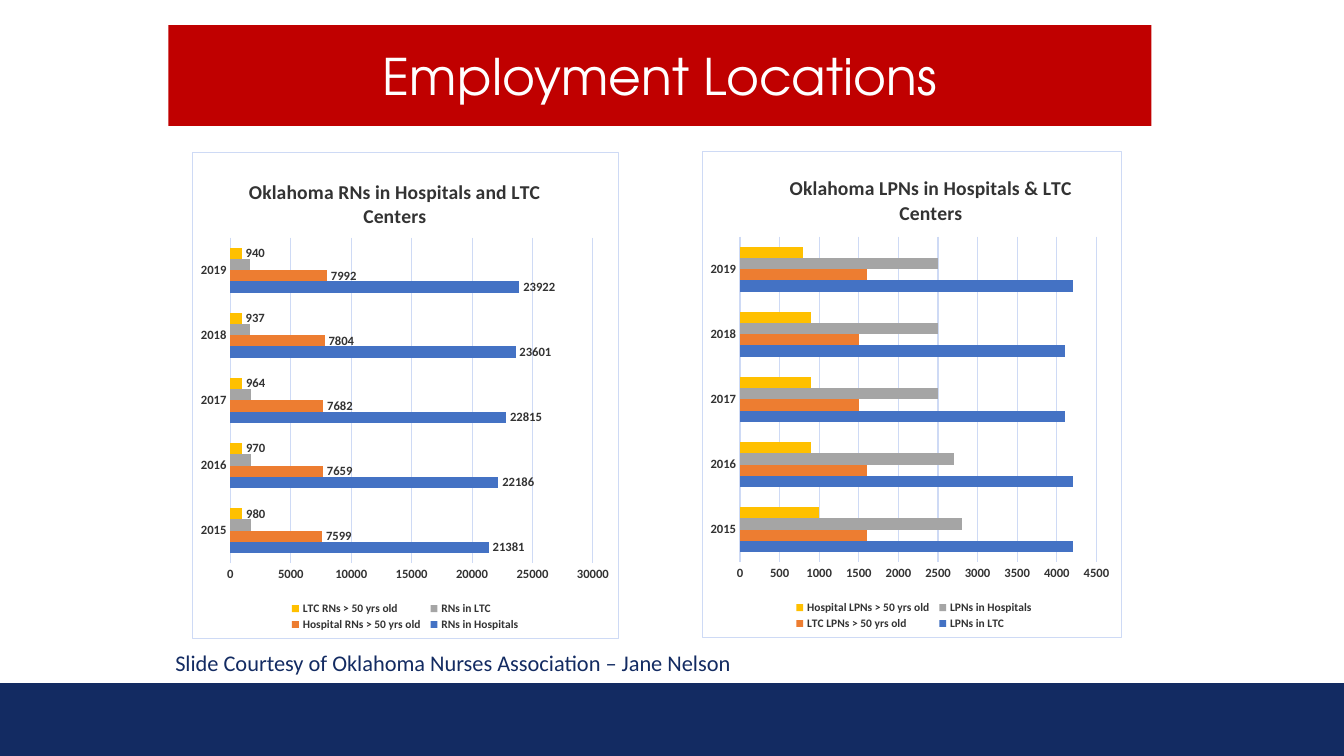
from lxml import etree
from pptx import Presentation
from pptx.chart.data import CategoryChartData
from pptx.dml.color import RGBColor
from pptx.enum.chart import (XL_CHART_TYPE, XL_LABEL_POSITION,
                             XL_LEGEND_POSITION, XL_TICK_MARK)
from pptx.enum.shapes import MSO_SHAPE
from pptx.enum.text import MSO_ANCHOR, PP_ALIGN
from pptx.oxml import parse_xml
from pptx.oxml.ns import nsdecls, qn
from pptx.util import Inches, Pt

BAR_CLUSTERED = XL_CHART_TYPE.BAR_CLUSTERED
OUTSIDE_END = XL_LABEL_POSITION.OUTSIDE_END
LEGEND_BOTTOM = XL_LEGEND_POSITION.BOTTOM
NO_TICK = XL_TICK_MARK.NONE
RECTANGLE = MSO_SHAPE.RECTANGLE
MIDDLE = MSO_ANCHOR.MIDDLE
LEFT, CENTER = PP_ALIGN.LEFT, PP_ALIGN.CENTER

NAVY = RGBColor(0x13, 0x2B, 0x62)
RED = RGBColor(0xC0, 0x00, 0x00)
WHITE = RGBColor(0xFF, 0xFF, 0xFF)
BLACK = RGBColor(0x00, 0x00, 0x00)
CHARCOAL = RGBColor(0x33, 0x33, 0x33)
PALE_BLUE = RGBColor(0xCE, 0xDA, 0xF5)
SERIES_COLORS = (RGBColor(0x44, 0x72, 0xC4), RGBColor(0xED, 0x7D, 0x31),
                 RGBColor(0xA5, 0xA5, 0xA5), RGBColor(0xFF, 0xC0, 0x00))

SLIDE_W, SLIDE_H = 13.33, 7.5
TITLE_FONT, BODY_FONT = "TeX Gyre Adventor", "Calibri"
YEARS = ("2015", "2016", "2017", "2018", "2019")

# Series, bottom bar first: name, values, whether the bars carry labels
RN_STAFF = (
    ("RNs in Hospitals", (21381, 22186, 22815, 23601, 23922), True),
    ("Hospital RNs > 50 yrs old", (7599, 7659, 7682, 7804, 7992), True),
    ("RNs in LTC", (1700, 1700, 1700, 1600, 1600), False),
    ("LTC RNs > 50 yrs old", (980, 970, 964, 937, 940), True),
)
LPN_STAFF = (
    ("LPNs in LTC", (4200, 4200, 4100, 4100, 4200), False),
    ("LTC LPNs > 50 yrs old", (1600, 1600, 1500, 1500, 1600), False),
    ("LPNs in Hospitals", (2800, 2700, 2500, 2500, 2500), False),
    ("Hospital LPNs > 50 yrs old", (1000, 900, 900, 900, 800), False),
)


def format_font(font, size, color=CHARCOAL, name=BODY_FONT, bold=False):
    font.size, font.name, font.bold = Pt(size), name, bold
    font.color.rgb = color


def write_text(frame, text, align=LEFT, **font_format):
    frame.text = text
    paragraph = frame.paragraphs[0]
    paragraph.alignment = align
    format_font(paragraph.runs[0].font, **font_format)


def place(shape, box):
    shape.left, shape.top, shape.width, shape.height = map(Inches, box)


def set_layout(part, shares, inner=False):
    """Place a chart part by shares of the chart's size: x, y[, w, h]."""
    for old in part.findall(qn("c:layout")):
        part.remove(old)
    layout = etree.Element(qn("c:layout"))
    manual = etree.SubElement(layout, qn("c:manualLayout"))
    settings = [("layoutTarget", "inner")] if inner else []
    settings += [("xMode", "edge"), ("yMode", "edge")]
    settings += zip("xywh", shares)
    for tag, value in settings:
        etree.SubElement(manual, qn("c:" + tag)).set("val", str(value))
    overlay = part.find(qn("c:overlay"))
    if overlay is None:
        part.insert(0, layout)
    else:
        overlay.addprevious(layout)


def frame_chart(chart):
    """White background with a thin pale border."""
    chart.element.find(qn("c:chart")).addnext(parse_xml(
        f'<c:spPr {nsdecls("c", "a")}>'
        f'<a:solidFill><a:srgbClr val="{WHITE}"/></a:solidFill>'
        f'<a:ln w="{Pt(0.75)}"><a:solidFill><a:srgbClr val="{PALE_BLUE}"/>'
        '</a:solidFill></a:ln></c:spPr>'))


def add_title(slide, box, text):
    title = slide.shapes.title
    place(title, box)
    title.fill.solid()
    title.fill.fore_color.rgb = RED
    title.text_frame.vertical_anchor = MIDDLE
    write_text(title.text_frame, text, CENTER, size=36, color=WHITE,
               name=TITLE_FONT)


def add_footer_band(slide, box):
    band = slide.shapes.add_shape(RECTANGLE, *map(Inches, box))
    band.shadow.inherit = False
    band.fill.solid()
    band.fill.fore_color.rgb = NAVY
    band.line.color.rgb = NAVY
    band.line.width = Pt(1)


def add_credit(slide, box, text):
    credit = slide.shapes.add_textbox(*map(Inches, box))
    credit.text_frame.word_wrap = True
    write_text(credit.text_frame, text, size=16, color=NAVY)


def style_axes(chart, maximum, step):
    years, counts = chart.category_axis, chart.value_axis
    for axis in (years, counts):
        axis.major_tick_mark = axis.minor_tick_mark = NO_TICK
        format_font(axis.tick_labels.font, 9, bold=True)
    years.format.line.color.rgb = PALE_BLUE
    years.format.line.width = Pt(0.75)
    counts.format.line.fill.background()
    counts.minimum_scale, counts.maximum_scale = 0, maximum
    counts.major_unit = step
    counts.has_major_gridlines = True
    grid = counts.major_gridlines.format.line
    grid.color.rgb, grid.width = PALE_BLUE, Pt(0.75)


def add_staff_chart(slide, box, heading, staff, maximum, step,
                    heading_at, legend_at):
    data = CategoryChartData()
    data.categories = YEARS
    for name, values, _ in staff:
        data.add_series(name, values)
    chart = slide.shapes.add_chart(
        BAR_CLUSTERED, *map(Inches, box), data).chart
    format_font(chart.font, 10, BLACK)
    frame_chart(chart)

    # Heading, plot and legend
    write_text(chart.chart_title.text_frame, heading, CENTER, size=14,
               bold=True)
    chart.chart_title.include_in_layout = False
    set_layout(chart.chart_title.element, heading_at)
    chart.has_legend = True
    chart.legend.position = LEGEND_BOTTOM
    chart.legend.include_in_layout = False
    format_font(chart.legend.font, 8.2, bold=True)
    body = chart.element.find(qn("c:chart"))
    set_layout(body.find(qn("c:legend")), legend_at)
    set_layout(body.find(qn("c:plotArea")), (0.09, 0.175, 0.85, 0.67),
               inner=True)
    style_axes(chart, maximum, step)

    # Bars
    plot = chart.plots[0]
    plot.gap_width, plot.overlap = 182, 0
    plot.vary_by_categories = False
    for series, color, (_, _, labelled) in zip(plot.series, SERIES_COLORS,
                                               staff):
        series.format.fill.solid()
        series.format.fill.fore_color.rgb = color
        if labelled:
            labels = series.data_labels
            labels.show_value = True
            labels.position = OUTSIDE_END
            format_font(labels.font, 9, bold=True)


def main():
    deck = Presentation()
    deck.slide_width, deck.slide_height = Inches(SLIDE_W), Inches(SLIDE_H)
    slide = deck.slides.add_slide(deck.slide_layouts[5])
    add_footer_band(slide, (0, 6.78, SLIDE_W, SLIDE_H - 6.78))
    add_title(slide, (1.67, 0.25, 9.75, 1), "Employment Locations")
    add_staff_chart(slide, (1.9, 1.51, 4.24, 4.83),
                    "Oklahoma RNs in Hospitals and LTC Centers", RN_STAFF,
                    30000, 5000, (0.125, 0.045), (0.22, 0.92, 0.56, 0.07))
    add_staff_chart(slide, (6.96, 1.5, 4.17, 4.83),
                    "Oklahoma LPNs in Hospitals & LTC Centers", LPN_STAFF,
                    4500, 500, (0.2, 0.04), (0.21, 0.92, 0.59, 0.07))
    add_credit(slide, (1.64, 6.39, 6.5, 0.64),
               "Slide Courtesy of Oklahoma Nurses Association – Jane Nelson")
    deck.save("out.pptx")


if __name__ == "__main__":
    main()
